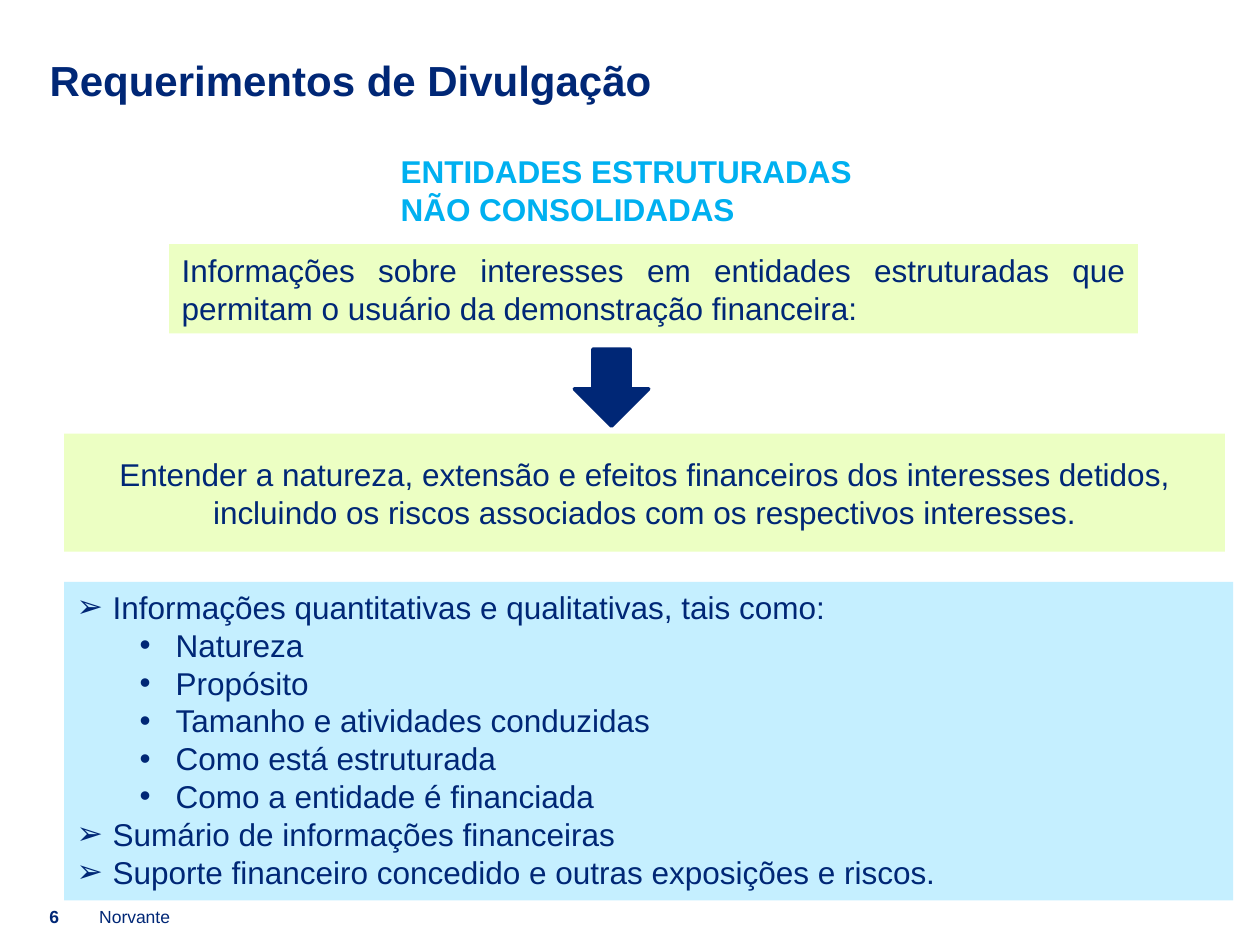
import pptx
import pptx.dml.color
import pptx.enum.shapes
import pptx.enum.text
import pptx.oxml.ns
import pptx.util
import lxml.etree

Pt = pptx.util.Pt
ALIGN = pptx.enum.text.PP_ALIGN
ANCHOR = pptx.enum.text.MSO_ANCHOR
SHAPE = pptx.enum.shapes.MSO_SHAPE

COLORS = {"navy": "002776", "cyan": "00B0F0", "lime": "ECFFC3", "sky": "C5EFFF"}
INSETS = (7.2, 3.6, 7.2, 3.6)
# Bullet character and text indent for each list level
BULLETS = [("➢", 20.6), ("•", 56.6)]
HANGING = 20.6


def rgb(name):
    return pptx.dml.color.RGBColor.from_string(COLORS[name])


def write_text(frame, text, *, size=18, color="navy", bold=False, align=ALIGN.LEFT,
               anchor=ANCHOR.TOP, insets=INSETS, wrap=True):
    """Fill a frame with a string, or with (level, string) pairs for a bullet list."""
    frame.word_wrap = wrap
    frame.vertical_anchor = anchor
    frame.margin_left, frame.margin_top, frame.margin_right, frame.margin_bottom = map(Pt, insets)
    items = [(None, text)] if isinstance(text, str) else text
    for index, (level, content) in enumerate(items):
        para = frame.add_paragraph() if index else frame.paragraphs[0]
        para.alignment = align
        span = para.add_run()
        span.text = content
        span.font.name = "Arial"
        span.font.size = Pt(size)
        span.font.bold = bold
        span.font.color.rgb = rgb(color)
        if level is not None:
            add_bullet(para, level)


def add_bullet(para, level):
    character, indent = BULLETS[level]
    para.level = level
    properties = para._p.get_or_add_pPr()
    properties.set("marL", str(Pt(indent)))
    properties.set("indent", str(-Pt(HANGING)))
    font = lxml.etree.SubElement(properties, pptx.oxml.ns.qn("a:buFont"))
    font.set("typeface", "Arial")
    bullet = lxml.etree.SubElement(properties, pptx.oxml.ns.qn("a:buChar"))
    bullet.set("char", character)


class SlideBuilder:
    def __init__(self, page):
        self.page = page

    def label(self, place, text, **style):
        box = self.page.shapes.add_textbox(*map(Pt, place))
        write_text(box.text_frame, text, **style)

    def shape(self, kind, place, fill, line_width=None):
        shape = self.page.shapes.add_shape(kind, *map(Pt, place))
        shape.shadow.inherit = False
        shape.fill.solid()
        shape.fill.fore_color.rgb = rgb(fill)
        if line_width:
            shape.line.color.rgb = rgb(fill)
            shape.line.width = Pt(line_width)
        else:
            shape.line.fill.background()
        return shape

    def panel(self, place, fill, text, **style):
        panel = self.shape(SHAPE.RECTANGLE, place, fill)
        write_text(panel.text_frame, text, **style)

    def down_arrow(self, place, fill):
        self.shape(SHAPE.DOWN_ARROW, place, fill, line_width=2)


def main():
    deck = pptx.Presentation()
    deck.slide_width, deck.slide_height = Pt(720), Pt(540)
    builder = SlideBuilder(deck.slides.add_slide(deck.slide_layouts[6]))

    # Title and footer
    flush = {"insets": (0, 0, 0, 0)}
    footer = {"size": 10, "anchor": ANCHOR.BOTTOM, **flush}
    builder.label((28.3, 31, 663, 29), "Requerimentos de Divulgação", size=24, bold=True, **flush)
    builder.label((56.7, 520, 289.5, 10), "Norvante", wrap=False, **footer)
    builder.label((28.3, 520, 28, 10), "6", bold=True, **footer)

    # List of disclosures
    builder.panel((36.7, 332.5, 668, 182), "sky", [
        (0, "Informações quantitativas e qualitativas, tais como:"),
        (1, "Natureza"),
        (1, "Propósito"),
        (1, "Tamanho e atividades conduzidas"),
        (1, "Como está estruturada"),
        (1, "Como a entidade é financiada"),
        (0, "Sumário de informações financeiras"),
        (0, "Suporte financeiro concedido e outras exposições e riscos."),
    ])

    # Heading, requirement and its purpose
    builder.panel((36.7, 247.8, 663.3, 67.5), "lime",
                  "Entender a natureza, extensão e efeitos financeiros dos interesses detidos, "
                  "incluindo os riscos associados com os respectivos interesses.",
                  align=ALIGN.CENTER, anchor=ANCHOR.MIDDLE)
    builder.label((221.8, 83, 281, 51), "ENTIDADES ESTRUTURADAS NÃO CONSOLIDADAS",
                  color="cyan", bold=True, anchor=ANCHOR.MIDDLE)
    builder.panel((96.7, 139.5, 553.6, 51), "lime",
                  "Informações sobre interesses em entidades estruturadas que permitam "
                  "o usuário da demonstração financeira:",
                  align=ALIGN.JUSTIFY, anchor=ANCHOR.MIDDLE)
    builder.down_arrow((328.2, 199.5, 42.5, 44), "navy")

    deck.save("out.pptx")


if __name__ == "__main__":
    main()
